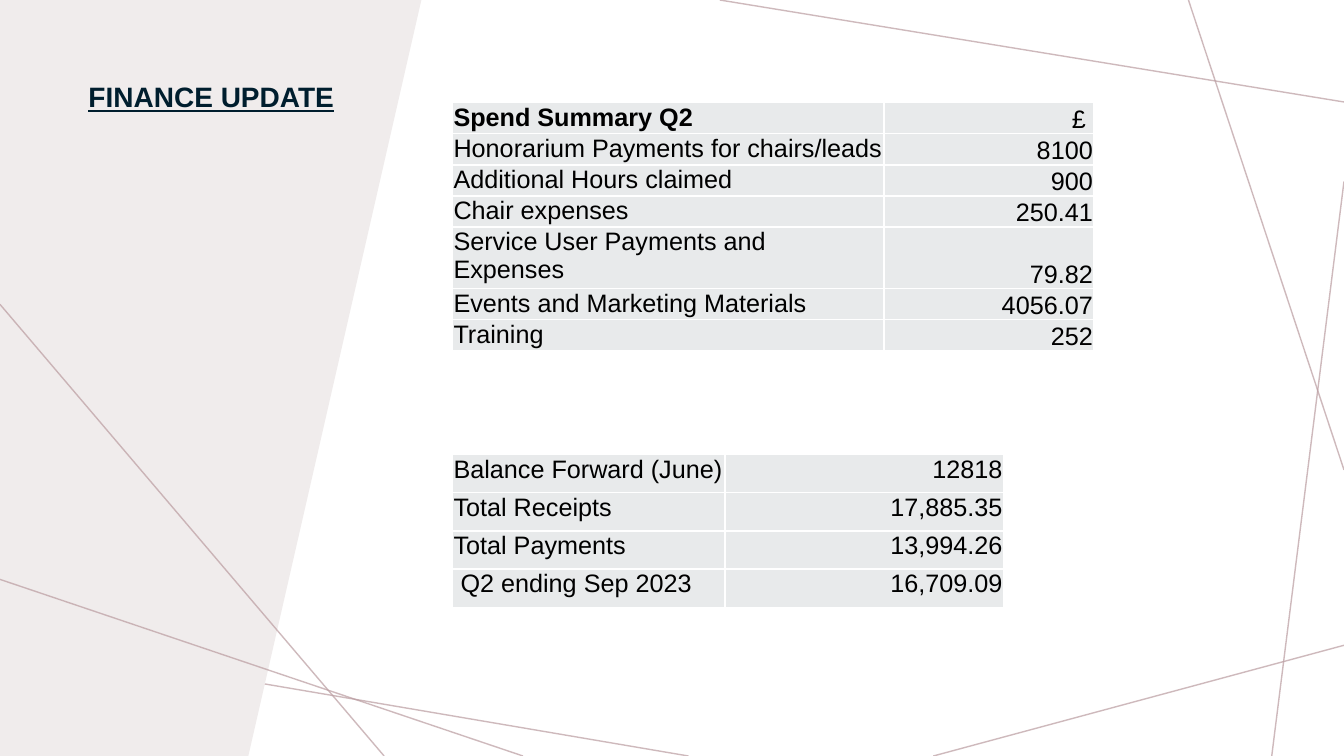
import pptx
import pptx.dml.color
import pptx.enum.text
import pptx.oxml
import pptx.oxml.ns
import pptx.util

Cm = pptx.util.Cm
Pt = pptx.util.Pt
ALIGN = pptx.enum.text.PP_ALIGN
ANCHOR = pptx.enum.text.MSO_ANCHOR
NS = pptx.oxml.ns.nsdecls("a")

COLORS = {
    "panel": "F0ECEC",
    "line": "BA9CA0",
    "title": "001E2E",
    "text": "000000",
    "cell": "E8EAEB",
    "border": "FFFFFF",
}
W, H = 33.87, 19.05

BACK_LINES = [
    ((17.35, H), (0, 16.1)),
    ((W, 16.26), (23.52, H)),
    ((W, 4.57), (32.05, H)),
    ((W, 11.84), (29.95, 0)),
    ((W, 2.57), (18.14, 0)),
]
FRONT_LINES = [
    ((0, 7.67), (9.68, H)),
    ((13.18, H), (0, 14.6)),
]
SPEND = [
    ("Spend Summary Q2", "£ "),
    ("Honorarium Payments for chairs/leads", "8100"),
    ("Additional Hours claimed", "900"),
    ("Chair expenses", "250.41"),
    ("Service User Payments and Expenses", "79.82"),
    ("Events and Marketing Materials", "4056.07"),
    ("Training", "252"),
]
BALANCE = [
    ("Balance Forward (June)", "12818"),
    ("Total Receipts", "17,885.35"),
    ("Total Payments", "13,994.26"),
    (" Q2 ending Sep 2023", "16,709.09"),
]


def rgb(name):
    return pptx.dml.color.RGBColor.from_string(COLORS[name])


def write(tf, text, size=18, color="text", bold=False, underline=False,
          align=ALIGN.LEFT, spacing=None):
    p = tf.paragraphs[0]
    p.alignment = align
    if spacing:
        p.line_spacing = spacing
    r = p.add_run()
    r.text = text
    r.font.name = "Arial"
    r.font.size = Pt(size)
    r.font.bold = bold
    r.font.underline = underline
    r.font.color.rgb = rgb(color)


def add_lines(s, lines):
    for start, end in lines:
        line = s.shapes.add_connector(
            pptx.enum.shapes.MSO_CONNECTOR.STRAIGHT,
            *(Cm(v) for v in start + end))
        line.line.width = Pt(1)
        line.line.color.rgb = rgb("line")
        spPr = line._element.spPr
        clr = spPr.find(".//" + pptx.oxml.ns.qn("a:srgbClr"))
        clr.append(pptx.oxml.parse_xml(f'<a:alpha {NS} val="70000"/>'))
        spPr.append(pptx.oxml.parse_xml(f"<a:effectLst {NS}/>"))


def add_panel(s, x, y, w, h, slant):
    fb = s.shapes.build_freeform(Cm(x), Cm(y))
    corners = [(x + w, y), (x + w - slant, y + h), (x, y + h)]
    fb.add_line_segments([(Cm(a), Cm(b)) for a, b in corners], close=True)
    sp = fb.convert_to_shape()
    sp.shadow.inherit = False
    sp.fill.solid()
    sp.fill.fore_color.rgb = rgb("panel")
    sp.line.fill.background()


def add_title(s, x, y, w, h):
    tf = s.shapes.add_textbox(Cm(x), Cm(y), Cm(w), Cm(h)).text_frame
    tf.word_wrap = True
    write(tf, "FINANCE UPDATE", size=20, color="title", bold=True,
          underline=True, spacing=0.9)


def style_cell(cell):
    cell.margin_left = cell.margin_right = cell.margin_top = Cm(0.02)
    cell.margin_bottom = 0
    cell.fill.solid()
    cell.fill.fore_color.rgb = rgb("cell")
    tcPr = cell._tc.get_or_add_tcPr()
    for i, side in enumerate("LRTB"):
        tcPr.insert(i, pptx.oxml.parse_xml(
            f'<a:ln{side} {NS} w="12700"><a:solidFill>'
            f'<a:srgbClr val="{COLORS["border"]}"/></a:solidFill></a:ln{side}>'))


def add_finance_table(s, x, y, widths, heights, rows, header=False,
                      value_anchor=ANCHOR.TOP):
    table = s.shapes.add_table(len(rows), 2, Cm(x), Cm(y), Cm(sum(widths)),
                               Cm(sum(heights))).table
    table.first_row = header
    table.horz_banding = False
    for col, width in zip(table.columns, widths):
        col.width = Cm(width)
    for i, (label, value) in enumerate(rows):
        table.rows[i].height = Cm(heights[i])
        name_cell, value_cell = table.cell(i, 0), table.cell(i, 1)
        style_cell(name_cell)
        style_cell(value_cell)
        value_cell.vertical_anchor = value_anchor
        write(name_cell.text_frame, label, bold=header and i == 0)
        write(value_cell.text_frame, value, align=ALIGN.RIGHT)


def add_finance_slide(prs):
    s = prs.slides.add_slide(prs.slide_layouts[6])
    add_lines(s, BACK_LINES)
    add_panel(s, 0, 0, 10.62, H, slant=4.36)
    add_title(s, 1.98, 1.98, 6.86, 5.16)
    add_lines(s, FRONT_LINES)
    add_finance_table(s, 11.41, 11.46, [6.86, 7.01], [0.96] * 4, BALANCE)
    add_finance_table(s, 11.41, 2.59, [10.87, 5.28],
                      [0.66] * 4 + [0.86] + [0.66] * 2, SPEND,
                      header=True, value_anchor=ANCHOR.BOTTOM)


def main():
    prs = pptx.Presentation()
    prs.slide_width, prs.slide_height = Cm(W), Cm(H)
    add_finance_slide(prs)
    prs.save("out.pptx")


if __name__ == "__main__":
    import pptx.enum.shapes
    main()
